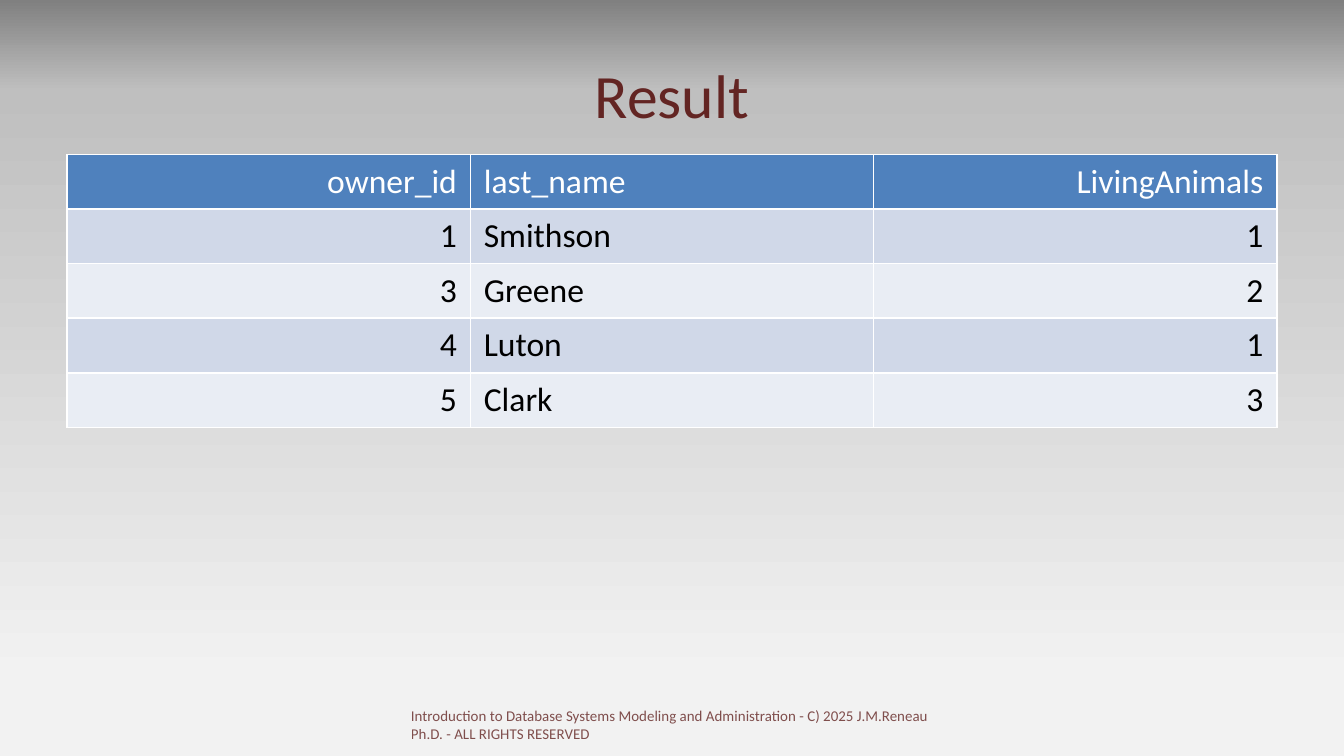
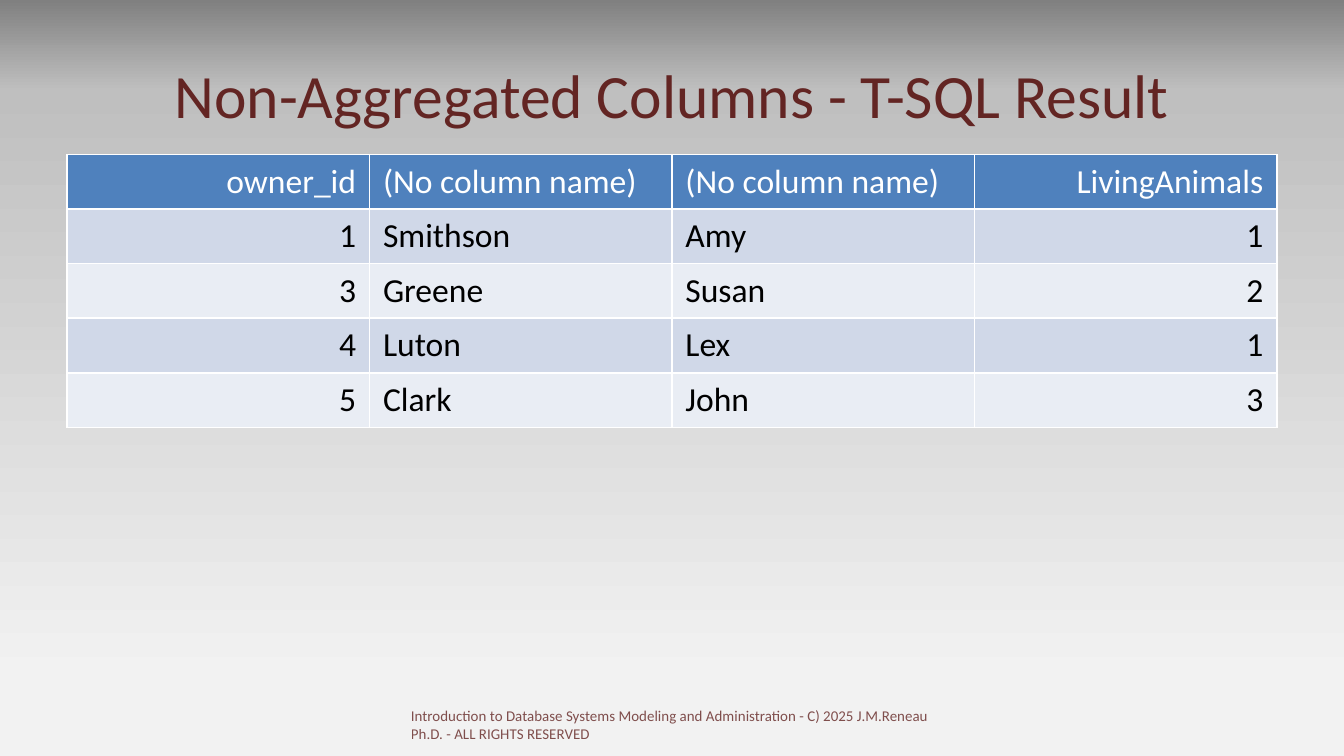
from lxml import etree
from pptx import Presentation
from pptx.dml.color import RGBColor
from pptx.enum.text import MSO_ANCHOR, PP_ALIGN
from pptx.oxml.ns import qn
from pptx.util import Inches, Pt

LEFT, CENTER, RIGHT = PP_ALIGN.LEFT, PP_ALIGN.CENTER, PP_ALIGN.RIGHT
TOP, MIDDLE = MSO_ANCHOR.TOP, MSO_ANCHOR.MIDDLE

FONT = "Calibri"
MAROON, WHITE, BLACK = "632523", "FFFFFF", "000000"
HEAD = "4F81BD"
BANDS = ("D0D8E8", "E9EDF4")
STOPS = ((0, "808080"), (12, "BFBFBF"), (90, "F2F2F2"))

FOOTER = ("Introduction to Database Systems Modeling and Administration"
          " - C) 2025 J.M.Reneau Ph.D. - ALL RIGHTS RESERVED")

# Title, column alignments, table rows with the header first
SLIDES = [
    ("Result", (RIGHT, LEFT, RIGHT), [
        ("owner_id", "last_name", "LivingAnimals"),
        ("1", "Smithson", "1"),
        ("3", "Greene", "2"),
        ("4", "Luton", "1"),
        ("5", "Clark", "3"),
    ]),
    ("Non-Aggregated Columns - T-SQL Result", (RIGHT, LEFT, LEFT, RIGHT), [
        ("owner_id", "(No column name)", "(No column name)", "LivingAnimals"),
        ("1", "Smithson", "Amy", "1"),
        ("3", "Greene", "Susan", "2"),
        ("4", "Luton", "Lex", "1"),
        ("5", "Clark", "John", "3"),
    ]),
]

TITLE_BOX = (0.5, 0.23, 9, 0.94)
GRID_BOX = (0.5, 1.15, 9, 2.03)
FOOT_BOX = (2.96, 5.21, 4.06, 0.3)


def rgb(code):
    return RGBColor.from_string(code)


def add_color(parent, code):
    return etree.SubElement(parent, qn("a:srgbClr"), val=code)


def write(frame, text, size, color, align):
    par = frame.paragraphs[0]
    par.alignment = align
    run = par.add_run()
    run.text = text
    run.font.name = FONT
    run.font.size = Pt(size)
    run.font.color.rgb = rgb(color)
    return run


def add_text(slide, box, text, size, align, anchor):
    frame = slide.shapes.add_textbox(*map(Inches, box)).text_frame
    frame.word_wrap = True
    frame.vertical_anchor = anchor
    return write(frame, text, size, MAROON, align)


def paint(slide):
    """Fill the background with the grey gradient, dark at the top."""
    fill = slide.background.fill
    fill.gradient()
    fill.gradient_angle = 270
    stops = slide.element.find(".//" + qn("a:gsLst"))
    for old in list(stops):
        stops.remove(old)
    for pos, code in STOPS:
        stop = etree.SubElement(stops, qn("a:gs"), pos=str(pos * 1000))
        add_color(stop, code)


def edge(cell):
    """Draw thin white borders on all four sides."""
    props = cell._tc.get_or_add_tcPr()
    for i, side in enumerate("LRTB"):
        line = etree.Element(qn("a:ln" + side), w=str(Pt(1)))
        add_color(etree.SubElement(line, qn("a:solidFill")), WHITE)
        props.insert(i, line)


def add_grid(slide, aligns, rows):
    """Add the table; its box is shared evenly by the rows and columns."""
    table = slide.shapes.add_table(
        len(rows), len(aligns), *map(Inches, GRID_BOX)).table
    for r, row in enumerate(rows):
        fill, ink = (BANDS[(r - 1) % 2], BLACK) if r else (HEAD, WHITE)
        for c, text in enumerate(row):
            cell = table.cell(r, c)
            cell.fill.solid()
            cell.fill.fore_color.rgb = rgb(fill)
            edge(cell)
            run = write(cell.text_frame, text, 18, ink, aligns[c])
            run.font.bold = False


def add_footer(slide):
    run = add_text(slide, FOOT_BOX, FOOTER, 8, LEFT, TOP)
    color = run.font._element.find(".//" + qn("a:srgbClr"))
    etree.SubElement(color, qn("a:alpha"), val="80000")


def main():
    prs = Presentation()
    prs.slide_width = Inches(10)
    prs.slide_height = prs.slide_width * 9 // 16
    for title, aligns, rows in SLIDES:
        slide = prs.slides.add_slide(prs.slide_layouts[6])
        paint(slide)
        add_text(slide, TITLE_BOX, title, 33, CENTER, MIDDLE)
        add_grid(slide, aligns, rows)
        add_footer(slide)
    prs.save("out.pptx")


if __name__ == "__main__":
    main()
